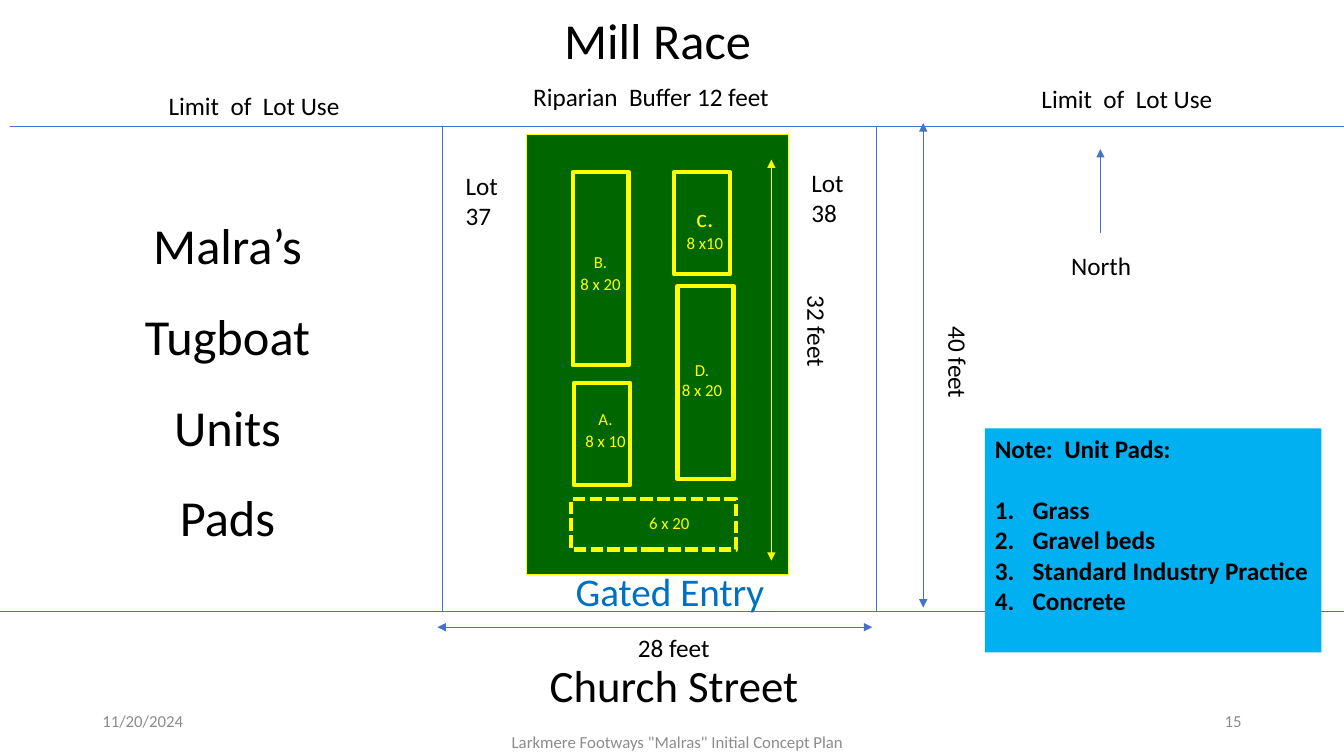
import pptx
import pptx.dml.color
import pptx.enum.dml
import pptx.enum.shapes
import pptx.enum.text
import pptx.oxml.ns
import pptx.util
from lxml import etree

Pt = pptx.util.Pt
RGB = pptx.dml.color.RGBColor.from_string
ALIGN = pptx.enum.text.PP_ALIGN
ANCHOR = pptx.enum.text.MSO_ANCHOR
RECT = pptx.enum.shapes.MSO_SHAPE.RECTANGLE
qn = pptx.oxml.ns.qn


class Theme:
    font = "Calibri"
    black, white, grey = RGB("000000"), RGB("FFFFFF"), RGB("8C8C8C")
    blue, entry, note = RGB("4472C4"), RGB("0070C0"), RGB("00B0F0")
    lawn, yellow = RGB("006600"), RGB("FFFF00")
    heading, street, gate, body, small = 36, 32, 28, 18, 12


prs = pptx.Presentation()
prs.slide_width, prs.slide_height = Pt(960), Pt(540)
s = prs.slides.add_slide(prs.slide_layouts[6])


def label(text, box, size=Theme.body, color=Theme.black, align=ALIGN.CENTER,
          fill=None, anchor=ANCHOR.TOP):
    """Place one paragraph per line of text; a fill makes it a rectangle."""
    frame = [Pt(v) for v in box]
    if fill is None:
        sp = s.shapes.add_textbox(*frame)
    else:
        sp = s.shapes.add_shape(RECT, *frame)
        sp.shadow.inherit = False
        sp.fill.solid()
        sp.fill.fore_color.rgb = fill
        sp.line.fill.background()
    tf = sp.text_frame
    tf.word_wrap = True
    tf.vertical_anchor = anchor
    tf.text = text
    for p in tf.paragraphs:
        p.alignment = align
        p.font.name, p.font.size, p.font.color.rgb = Theme.font, Pt(size), color
    return sp


def line(x1, y1, x2, y2, color=Theme.blue, ends=()):
    """Draw a thin line; ends names the arrowheads (headEnd, tailEnd)."""
    sp = s.shapes.add_connector(pptx.enum.shapes.MSO_CONNECTOR.STRAIGHT,
                                Pt(x1), Pt(y1), Pt(x2), Pt(y2))
    sp.line.width = Pt(0.5)
    sp.line.color.rgb = color
    for end in ends:
        etree.SubElement(sp.line._get_or_add_ln(), qn(f"a:{end}"), type="triangle")
    etree.SubElement(sp._element.spPr, qn("a:effectLst"))


BOTH = ("headEnd", "tailEnd")
LIMIT_Y, STREET_Y = 90.5, 436.5
LOT_LEFT, LOT_RIGHT = 316, 626

# Surroundings and lot boundaries
street = label("Church Street", (34.5, 466.5, 908.5, 46), Theme.street, fill=Theme.white)
street.text_frame.margin_right = Pt(21.5)
label("Mill Race", (312.5, 3, 314.5, 51), Theme.heading)
line(7, LIMIT_Y, 960, LIMIT_Y)
line(0, STREET_Y, 960, STREET_Y)
for x in (LOT_LEFT, LOT_RIGHT):
    line(x, LIMIT_Y, x, STREET_Y)
for text, x, y in (("Lot 37", 325.5, 118), ("Lot 38", 572.5, 116)):
    label(text, (x, y, 47, 51), align=ALIGN.LEFT)
for x, y in ((60.5, 61), (684, 56)):
    label("Limit  of  Lot Use", (x, y, 242, 29))
label("Riparian  Buffer 12 feet", (360.5, 54.5, 209, 29))

line(786, 166.5, 786, 106.5, ends=("tailEnd",))
label("North", (758, 175.5, 124, 29), align=ALIGN.LEFT)

title = label("Malra’s\nTugboat\nUnits\nPads", (30, 128, 273, 262), Theme.heading)
title.text_frame.margin_right = Pt(15)
for p in title.text_frame.paragraphs:
    p.line_spacing = 1.5

# Lawn and unit pads
lawn = (376, 96, 187, 314.5)
pads = {
    "B": (409, 123, 40, 138),
    "D": (484, 204.5, 40, 138),
    "A": (410, 273.5, 40, 73),
    "C": (481.5, 123, 40, 73),
    "gate": (408, 356.5, 118, 36),
}
for name, box in {"lawn": lawn, **pads}.items():
    sp = s.shapes.add_shape(RECT, *[Pt(v) for v in box])
    sp.shadow.inherit = False
    sp.line.color.rgb = Theme.yellow
    if name == "lawn":
        sp.fill.solid()
        sp.fill.fore_color.rgb = Theme.lawn
        sp.line.width = Pt(0.75)
    else:
        sp.fill.background()
        sp.line.width = Pt(3)
    if name == "gate":
        sp.line.dash_style = pptx.enum.dml.MSO_LINE.SQUARE_DOT

for text, box, top in (
    ("B.\n8 x 20", (394, 170.5, 70, 44), 9),
    ("c.\n8 x10", (479.5, 141, 48, 44), 3.6),
    ("A.\n8 x 10", (397.5, 283, 70, 44), 9),
    ("D.\n8 x 20", (466.5, 253.5, 70, 36), 3.6),
    ("6 x 20", (443, 357, 70, 29), 9),
):
    tf = label(text, box, Theme.small, Theme.yellow).text_frame
    tf.margin_top = Pt(top)
    first = tf.paragraphs[0]
    if text.startswith("c."):
        first.font.size = Pt(Theme.body)
    elif top > 3.6:
        first.space_after = Pt(1.5)

# Dimensions
line(551, 114, 551, 400.5, Theme.yellow, BOTH)
line(659.5, 88, 659.5, 434, ends=BOTH)
line(312.5, 448, 623, 448, ends=BOTH)
label("28 feet", (422.5, 448, 117.5, 29))
for text, box in (("32 feet", (525, 222, 117.5, 29)), ("40 feet", (610, 244.5, 149, 29))):
    label(text, box).rotation = 90
label("Gated Entry", (363, 402, 231, 41), Theme.gate, Theme.entry)

# Note on pad materials
note = label("Note:  Unit Pads:\nGrass\nGravel beds\nStandard Industry Practice\nConcrete",
             (703.5, 306, 240.5, 160), align=ALIGN.LEFT, fill=Theme.note)
for i, p in enumerate(note.text_frame.paragraphs):
    p.font.bold = True
    if i == 0:
        p.space_after = Pt(22)
        continue
    pPr = p._p.get_or_add_pPr()
    pPr.set("marL", str(Pt(27)))
    pPr.set("indent", str(Pt(-27)))
    number = etree.Element(qn("a:buAutoNum"), type="arabicPeriod")
    pPr.find(qn("a:defRPr")).addprevious(number)

# Footer
for text, box, align in (
    ("11/20/2024", (66, 500.5, 216, 29), ALIGN.LEFT),
    ('Larkmere Footways "Malras" Initial Concept Plan', (322, 515.5, 324, 29), ALIGN.CENTER),
    ("15", (678, 500.5, 216, 29), ALIGN.RIGHT),
):
    label(text, box, Theme.small, Theme.grey, align, anchor=ANCHOR.MIDDLE)

prs.save("out.pptx")
